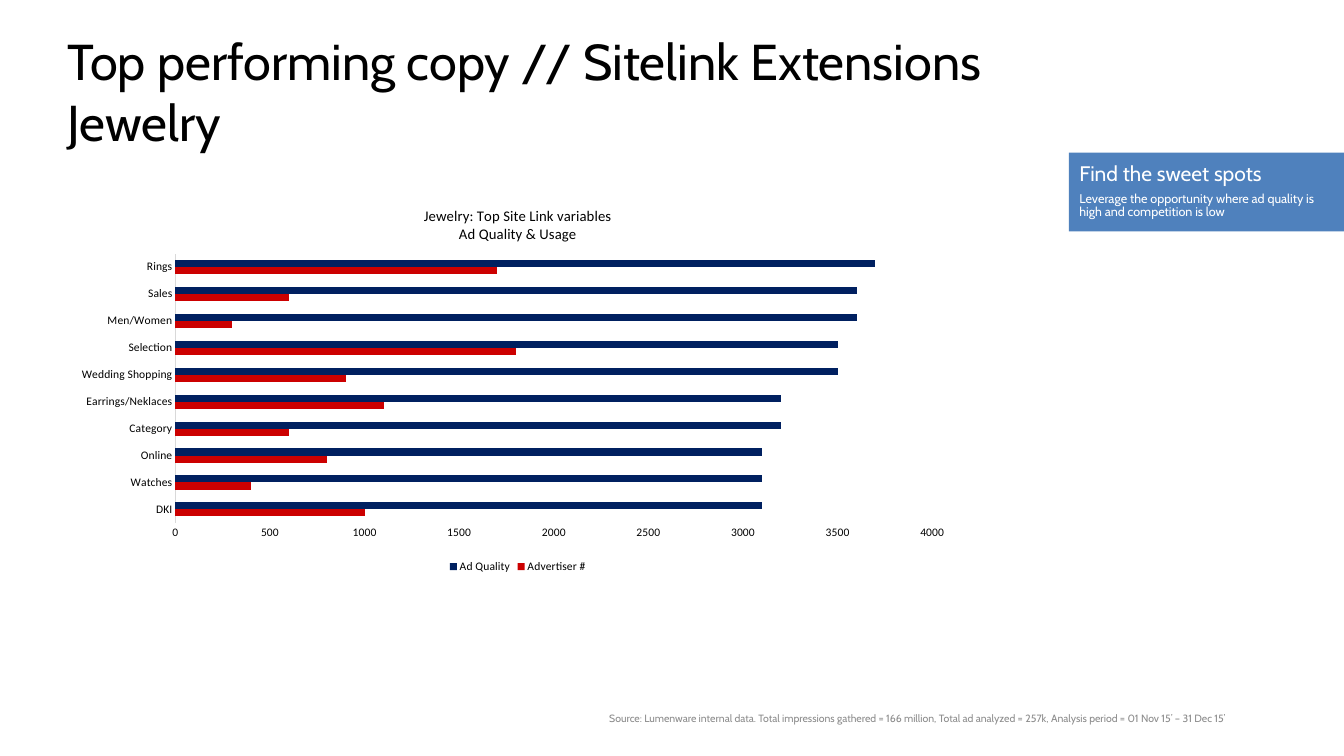
"""Build the jewelry sitelink slide with its bar chart and callout."""
from lxml.etree import SubElement
from pptx import Presentation
from pptx.chart.data import CategoryChartData
from pptx.dml.color import RGBColor
from pptx.enum.chart import XL_CHART_TYPE, XL_LEGEND_POSITION, XL_TICK_MARK
from pptx.enum.shapes import MSO_SHAPE
from pptx.enum.text import MSO_ANCHOR, PP_ALIGN
from pptx.oxml.ns import qn
from pptx.util import Inches, Pt

BLACK = RGBColor(0x00, 0x00, 0x00)
WHITE = RGBColor(0xFF, 0xFF, 0xFF)
GRAY = RGBColor(0x8C, 0x8C, 0x8C)
LIGHT_GRAY = RGBColor(0xD9, 0xD9, 0xD9)
BLUE = RGBColor(0x4F, 0x81, 0xBD)
NAVY = RGBColor(0x00, 0x20, 0x60)
RED = RGBColor(0xCC, 0x00, 0x00)

CATEGORIES = ["DKI", "Watches", "Online", "Category", "Earrings/Neklaces",
              "Wedding Shopping", "Selection", "Men/Women", "Sales", "Rings"]
SERIES = [
    ("Advertiser #", RED, [1000, 400, 800, 600, 1100, 900, 1800, 300, 600, 1700]),
    ("Ad Quality", NAVY, [3100, 3100, 3100, 3200, 3200, 3500, 3500, 3600, 3600, 3700]),
]
PLOT_LAYOUT = {"layoutTarget": "inner", "xMode": "edge", "yMode": "edge",
               "x": 0.12, "y": 0.16, "w": 0.84, "h": 0.7}


class SlideBuilder:
    """Hold the style and the current slide."""

    text_font = "Cabin"
    chart_font = "Calibri"

    def __init__(self, slide):
        """Keep the slide to draw on."""
        self.slide = slide

    def apply(self, target, values):
        """Set every attribute in the format values."""
        for name, value in values.items():
            setattr(target, name, value)

    def style_font(self, font, name, size, color):
        """Set the typeface, size and colour of a font."""
        self.apply(font, {"name": name, "size": Pt(size), "bold": False})
        font.color.rgb = color

    def fill_frame(self, frame, lines, color, margins, spacing):
        """Fill a text frame with (text, size) paragraphs."""
        sides = ("margin_left", "margin_top", "margin_right", "margin_bottom")
        self.apply(frame, dict(zip(sides, map(Inches, margins))))
        self.apply(frame, {"word_wrap": True, "vertical_anchor": MSO_ANCHOR.TOP})
        for index, (text, size) in enumerate(lines):
            paragraph = frame.add_paragraph() if index else frame.paragraphs[0]
            paragraph.text = text
            self.apply(paragraph, {"alignment": PP_ALIGN.LEFT, **spacing})
            for run in paragraph.runs:
                self.style_font(run.font, self.text_font, size, color)

    def text(self, box, text, size, color):
        """Add a text box without margins."""
        shape = self.slide.shapes.add_textbox(*map(Inches, box))
        self.fill_frame(shape.text_frame, [(text, size)], color, (0, 0, 0, 0), {})

    def callout(self, box, lines):
        """Add a filled rectangle with a heading and a note."""
        shape = self.slide.shapes.add_shape(MSO_SHAPE.RECTANGLE, *map(Inches, box))
        shape.shadow.inherit = False
        shape.fill.solid()
        shape.fill.fore_color.rgb = BLUE
        shape.line.fill.background()
        self.fill_frame(shape.text_frame, lines, WHITE, (0.14, 0.14, 0.1, 0.1),
                        {"line_spacing": 0.9, "space_after": Pt(6)})

    def chart(self, box, title_lines):
        """Add the clustered bar chart."""
        data = CategoryChartData()
        data.categories = CATEGORIES
        for name, _, values in SERIES:
            data.add_series(name, values)
        chart = self.slide.shapes.add_chart(
            XL_CHART_TYPE.BAR_CLUSTERED, *map(Inches, box), data).chart
        self.style_font(chart.font, self.chart_font, 10, BLACK)
        self.chart_title(chart, title_lines)
        self.axes(chart)
        chart.has_legend = True
        self.apply(chart.legend, {"position": XL_LEGEND_POSITION.BOTTOM,
                                  "include_in_layout": False})
        self.style_font(chart.legend.font, self.chart_font, 11, BLACK)
        plot = chart.plots[0]
        self.apply(plot, {"gap_width": 182, "overlap": 0, "vary_by_categories": False})
        for series, (_, color, _) in zip(plot.series, SERIES):
            series.format.fill.solid()
            series.format.fill.fore_color.rgb = color
        self.place_plot(chart)

    def chart_title(self, chart, lines):
        """Set the chart title, one paragraph a line."""
        chart.has_title = True
        frame = chart.chart_title.text_frame
        for index, line in enumerate(lines):
            paragraph = frame.add_paragraph() if index else frame.paragraphs[0]
            run = paragraph.add_run()
            run.text = line
            self.style_font(run.font, self.chart_font, 14, BLACK)
        chart.chart_title.include_in_layout = False

    def axes(self, chart):
        """Format both axes."""
        for axis in (chart.category_axis, chart.value_axis):
            self.apply(axis, {"has_major_gridlines": False,
                              "major_tick_mark": XL_TICK_MARK.NONE,
                              "minor_tick_mark": XL_TICK_MARK.NONE})
            self.style_font(axis.tick_labels.font, self.chart_font, 11, BLACK)
        self.apply(chart.value_axis, {"minimum_scale": 0, "maximum_scale": 4000,
                                      "major_unit": 500})
        chart.value_axis.format.line.fill.background()
        line = chart.category_axis.format.line
        line.color.rgb = LIGHT_GRAY
        line.width = Pt(0.75)

    def place_plot(self, chart):
        """Fix the inner plot area inside the chart."""
        area = chart.plots[0]._element.getparent()
        for layout in area.findall(qn("c:layout")):
            area.remove(layout)
        layout = SubElement(area, qn("c:layout"))
        area.insert(0, layout)
        manual = SubElement(layout, qn("c:manualLayout"))
        for name, value in PLOT_LAYOUT.items():
            SubElement(manual, qn(f"c:{name}")).set("val", str(value))


def main():
    """Build and save the presentation."""
    presentation = Presentation()
    presentation.slide_width = Inches(17.78)
    presentation.slide_height = Inches(10)
    builder = SlideBuilder(presentation.slides.add_slide(presentation.slide_layouts[6]))
    builder.text((0.89, 0.4, 16, 1.62),
                 "Top performing copy // Sitelink Extensions\vJewelry", 48, BLACK)
    builder.text((8.06, 9.42, 8.83, 0.25),
                 "Source: Lumenware internal data. Total impressions gathered = 166 million, "
                 "Total ad analyzed = 257k, Analysis period = 01 Nov 15’ – 31 Dec 15’", 10, GRAY)
    builder.callout((14.14, 2.02, 3.64, 1.04), [
        ("Find the sweet spots", 20),
        ("Leverage the opportunity where ad quality is high and competition is low", 12)])
    builder.chart((0.89, 2.54, 11.92, 5.09),
                  ["Jewelry: Top Site Link variables", "Ad Quality & Usage"])
    presentation.save("out.pptx")


if __name__ == "__main__":
    main()
